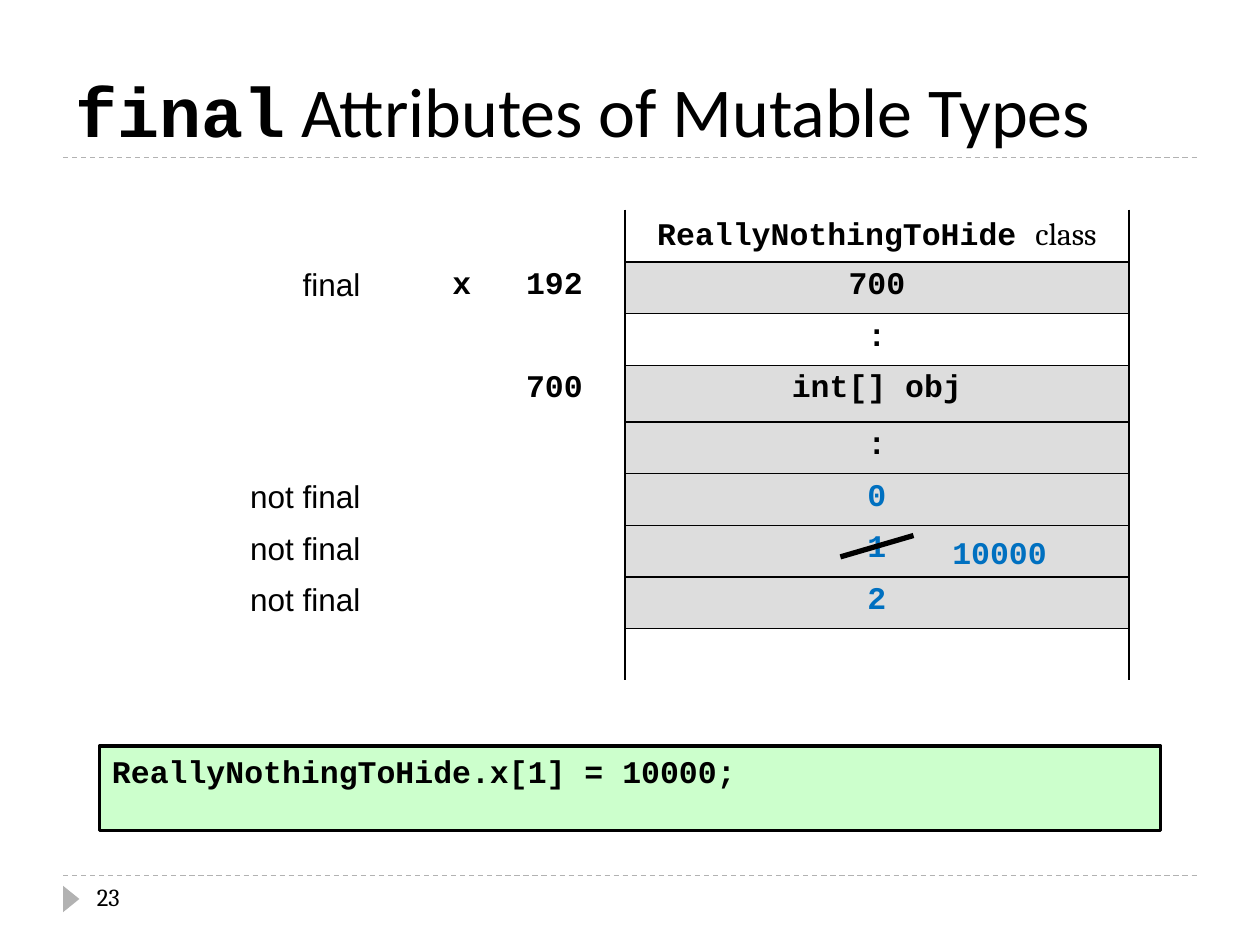
from lxml.etree import SubElement
from pptx import Presentation
from pptx.dml.color import RGBColor
from pptx.enum.dml import MSO_LINE
from pptx.enum.shapes import MSO_CONNECTOR, MSO_SHAPE
from pptx.enum.text import MSO_ANCHOR, PP_ALIGN as Align
from pptx.oxml.ns import qn
from pptx.util import Inches, Pt

# Content
TITLE = ("final", " Attributes of Mutable Types")
HEAD = ("ReallyNothingToHide ", "class")
CODE = "ReallyNothingToHide.x[1] = 10000;"
NEW = "10000"
PAGE = "23"
# label, name, address, value, value colour, value fill
ROWS = [
    ("", "", "", "", "ink", None),
    ("final", "x", "192", "700", "ink", "cell"),
    ("", "", "", ":", "ink", None),
    ("", "", "700", "int[] obj", "ink", "cell"),
    ("", "", "", ":", "ink", "cell"),
    ("not final", "", "", "0", "blue", "cell"),
    ("not final", "", "", "1", "blue", "cell"),
    ("not final", "", "", "2", "blue", "cell"),
    ("", "", "", "", "ink", None),
]
COLS = (1.92, 0.88, 1.12, 4)
ROW, TALL = 0.41, 0.45
ALIGNS = (Align.RIGHT, Align.RIGHT, Align.CENTER, Align.CENTER)

THEME = {
    "ink": "000000", "blue": "0070C0", "cell": "DDDDDD", "paper": "FFFFFF",
    "code": "CCFFCC", "rule": "B2B2B2",
    "mono": "Courier New", "sans": "Arial", "serif": "Cambria", "head": "Calibri",
    "big": 40, "body": 18, "small": 14,
}


def rgb(key):
    return RGBColor.from_string(THEME[key])


def style(run, face, size="body", color="ink"):
    font = run.font
    font.name, font.size = THEME[face], Pt(THEME[size])
    font.bold = face == "mono"
    font.color.rgb = rgb(color)


def write(para, parts, size="body", color="ink", align=Align.LEFT):
    para.alignment = align
    for text, face in parts:
        run = para.add_run()
        run.text = text
        style(run, face, size, color)


def line(shapes, start, end, color, width, dash=None):
    ends = [Inches(n) for n in (*start, *end)]
    item = shapes.add_connector(MSO_CONNECTOR.STRAIGHT, *ends)
    item.line.color.rgb, item.line.width = rgb(color), Pt(width)
    if dash:
        item.line.dash_style = dash
    SubElement(item._element.spPr, qn("a:effectLst"))


def shape(kind, box, fill):
    item = slide.shapes.add_shape(kind, *map(Inches, box))
    item.shadow.inherit = False
    item.fill.solid()
    item.fill.fore_color.rgb = rgb(fill)
    return item


def label(shapes, box, parts, size="body", color="ink"):
    frame = shapes.add_textbox(*map(Inches, box)).text_frame
    frame.word_wrap = True
    write(frame.paragraphs[0], parts, size, color)


def border(cell, sides):
    props = cell._tc.get_or_add_tcPr()
    for side in "LRTB":
        if side in sides:
            edge = SubElement(props, qn("a:ln" + side), w=str(Pt(1)))
            fill = SubElement(edge, qn("a:solidFill"))
            SubElement(fill, qn("a:srgbClr"), val=THEME["ink"])


deck = Presentation()
deck.slide_width, deck.slide_height = Inches(10), Inches(7.5)
slide = deck.slides.add_slide(deck.slide_layouts[5])

# Rules and page marker
for y in (6.95, 1.25):
    line(slide.shapes, (0.5, y), (9.5, y), "rule", 0.75, MSO_LINE.DASH)
mark = shape(MSO_SHAPE.ISOSCELES_TRIANGLE, (0.46, 7.07, 0.21, 0.13), "rule")
mark.rotation = 90
mark.line.fill.background()
label(slide.shapes, (0.67, 6.95, 2.17, 0.4), [(PAGE, "serif")], "small")

# Title
title = slide.shapes.title
title.left, title.top, title.width, title.height = map(Inches, (0.5, 0.25, 9, 1))
title.text_frame.vertical_anchor = MSO_ANCHOR.BOTTOM
write(title.text_frame.paragraphs[0], zip(TITLE, ("mono", "head")), "big")

# Memory table
high = ROW * (len(ROWS) - 1) + TALL
grid = slide.shapes.add_table(len(ROWS), len(COLS), *map(
    Inches, (1.04, 1.67, sum(COLS), high))).table
grid.first_row = grid.horz_banding = False
for col, wide in zip(grid.columns, COLS):
    col.width = Inches(wide)
last = len(ROWS) - 1
for r, (*texts, color, fill) in enumerate(ROWS):
    grid.rows[r].height = Inches(TALL if r == 3 else ROW)
    for c, text in enumerate(texts):
        cell = grid.cell(r, c)
        value = c == 3
        if value:
            border(cell, "LR" + "T" * (r > 0) + "B" * (r < last))
        elif c == 2:
            border(cell, "R")
        if value and not fill:
            cell.fill.background()
        else:
            cell.fill.solid()
            cell.fill.fore_color.rgb = rgb(fill if value else "paper")
        para = cell.text_frame.paragraphs[0]
        para.font.size = Pt(THEME["body"])
        if value and r == 0:
            write(para, zip(HEAD, ("mono", "serif")), align=ALIGNS[c])
        elif text:
            write(para, [(text, "mono" if c else "sans")],
                  color=color if value else "ink", align=ALIGNS[c])

# Code box
code = shape(MSO_SHAPE.RECTANGLE, (0.79, 5.92, 8.42, 0.67), "code")
code.line.color.rgb, code.line.width = rgb("ink"), Pt(2)
code.text_frame.vertical_anchor = MSO_ANCHOR.TOP
write(code.text_frame.paragraphs[0], [(CODE, "mono")])

# Struck-out value and its replacement
change = slide.shapes.add_group_shape().shapes
label(change, (7.46, 4.18, 0.96, 0.4), [(NEW, "mono")], color="blue")
line(change, (6.67, 4.42), (7.25, 4.25), "ink", 3)

deck.save("out.pptx")
